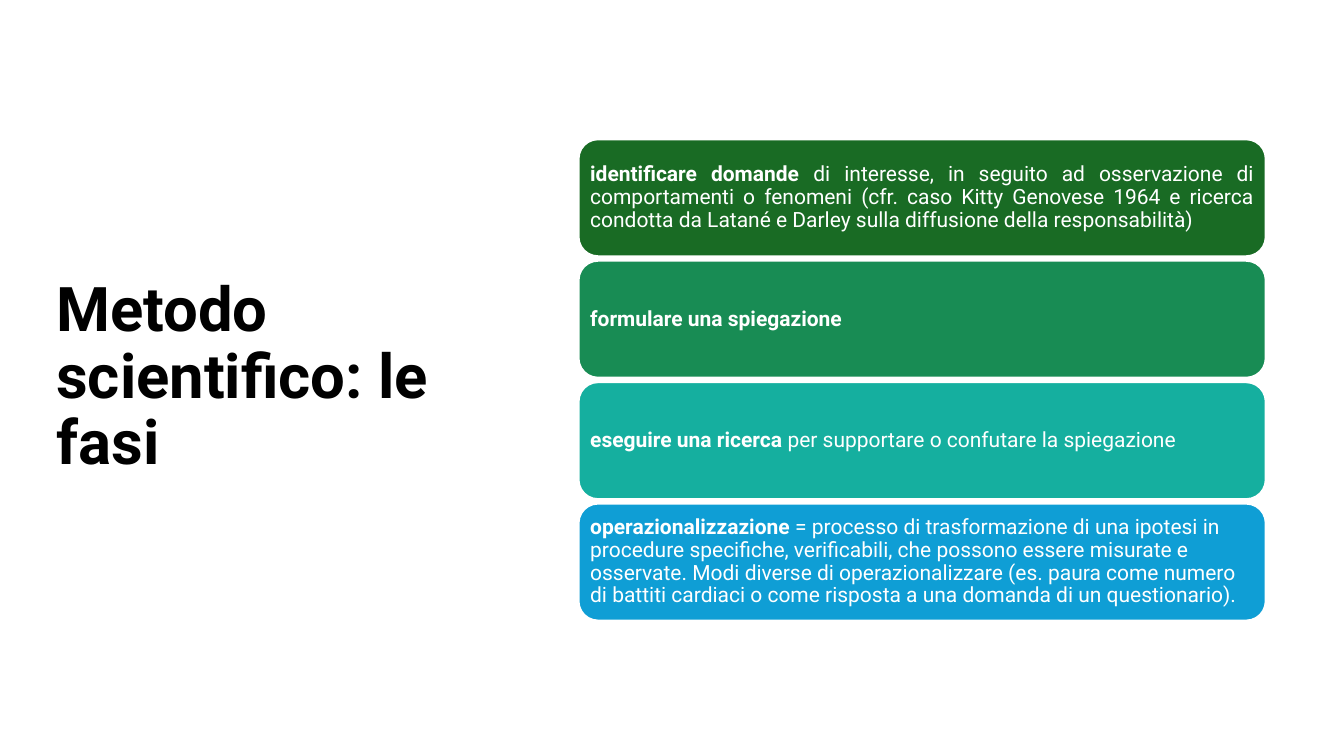
import dataclasses
import typing

import pptx
import pptx.dml.color
import pptx.enum.shapes
import pptx.enum.text
import pptx.slide
import pptx.text.text
import pptx.util

Cm = pptx.util.Cm
Pt = pptx.util.Pt
Align = pptx.enum.text.PP_ALIGN


@dataclasses.dataclass(frozen=True)
class Theme:
    font: str = "Roboto"
    dark: str = "000000"
    light: str = "FFFFFF"
    head: int = 44
    body: int = 15
    edge: float = 1.5


@dataclasses.dataclass(frozen=True)
class Step:
    fill: str
    term: str
    rest: str = ""
    align: Align = Align.LEFT


THEME = Theme()
TITLE = "Metodo scientifico: le fasi"
LEFT, TOP, WIDTH, HEIGHT = 14.58, 3.51, 17.32, 2.95
PITCH = 3.06
INSET = Cm(0.15)

STEPS = [
    Step(
        "196B24",
        "identificare domande ",
        "di interesse, in seguito ad osservazione di comportamenti o fenomeni "
        "(cfr. caso Kitty Genovese 1964 e ricerca condotta da Latané e Darley "
        "sulla diffusione della responsabilità)",
        Align.JUSTIFY,
    ),
    Step("188C54", "formulare una spiegazione"),
    Step(
        "15AF9F",
        "eseguire una ricerca",
        " per supportare o confutare la spiegazione",
        Align.JUSTIFY,
    ),
    Step(
        "0F9ED5",
        "operazionalizzazione",
        " = processo di trasformazione di una ipotesi in procedure specifiche, "
        "verificabili, che possono essere misurate e osservate. Modi diverse di "
        "operazionalizzare (es. paura come numero di battiti cardiaci o come "
        "risposta a una domanda di un questionario).",
    ),
]


def paint(code: str) -> pptx.dml.color.RGBColor:
    return pptx.dml.color.RGBColor.from_string(code)


def apply(target: typing.Any, values: dict[str, typing.Any]) -> None:
    for name, value in values.items():
        setattr(target, name, value)


def write(
    frame: pptx.text.text.TextFrame,
    parts: list[tuple[str, bool]],
    size: int,
    ink: str,
    align: Align = Align.LEFT,
) -> None:
    """Fill the frame with one paragraph of (text, bold) parts."""
    apply(frame, {
        "word_wrap": True,
        "vertical_anchor": pptx.enum.text.MSO_ANCHOR.MIDDLE,
    })
    para = frame.paragraphs[0]
    apply(para, {"alignment": align, "line_spacing": 0.9})
    for text, bold in parts:
        run = para.add_run()
        run.text = text
        apply(run.font, {"name": THEME.font, "size": Pt(size), "bold": bold})
        run.font.color.rgb = paint(ink)


def draw_title(slide: pptx.slide.Slide) -> None:
    box = slide.shapes.add_textbox(Cm(1.17), Cm(2.62), Cm(12.42), Cm(13.82))
    write(box.text_frame, [(TITLE, True)], THEME.head, THEME.dark)


def draw_step(slide: pptx.slide.Slide, step: Step, top: float) -> None:
    card = slide.shapes.add_shape(
        pptx.enum.shapes.MSO_SHAPE.ROUNDED_RECTANGLE,
        Cm(LEFT), Cm(top), Cm(WIDTH), Cm(HEIGHT),
    )
    card.shadow.inherit = False
    card.fill.solid()
    card.fill.fore_color.rgb = paint(step.fill)
    card.line.color.rgb = paint(THEME.light)
    card.line.width = Pt(THEME.edge)
    sides = ("left", "top", "right", "bottom")
    apply(card.text_frame, {f"margin_{side}": INSET for side in sides})
    parts = [(step.term, True)]
    if step.rest:
        parts.append((step.rest, False))
    write(card.text_frame, parts, THEME.body, THEME.light, step.align)


def main() -> None:
    deck = pptx.Presentation()
    apply(deck, {"slide_width": Cm(33.87), "slide_height": Cm(19.05)})
    slide = deck.slides.add_slide(deck.slide_layouts[6])
    draw_title(slide)
    for index, step in enumerate(STEPS):
        draw_step(slide, step, TOP + index * PITCH)
    deck.save("out.pptx")


if __name__ == "__main__":
    main()
